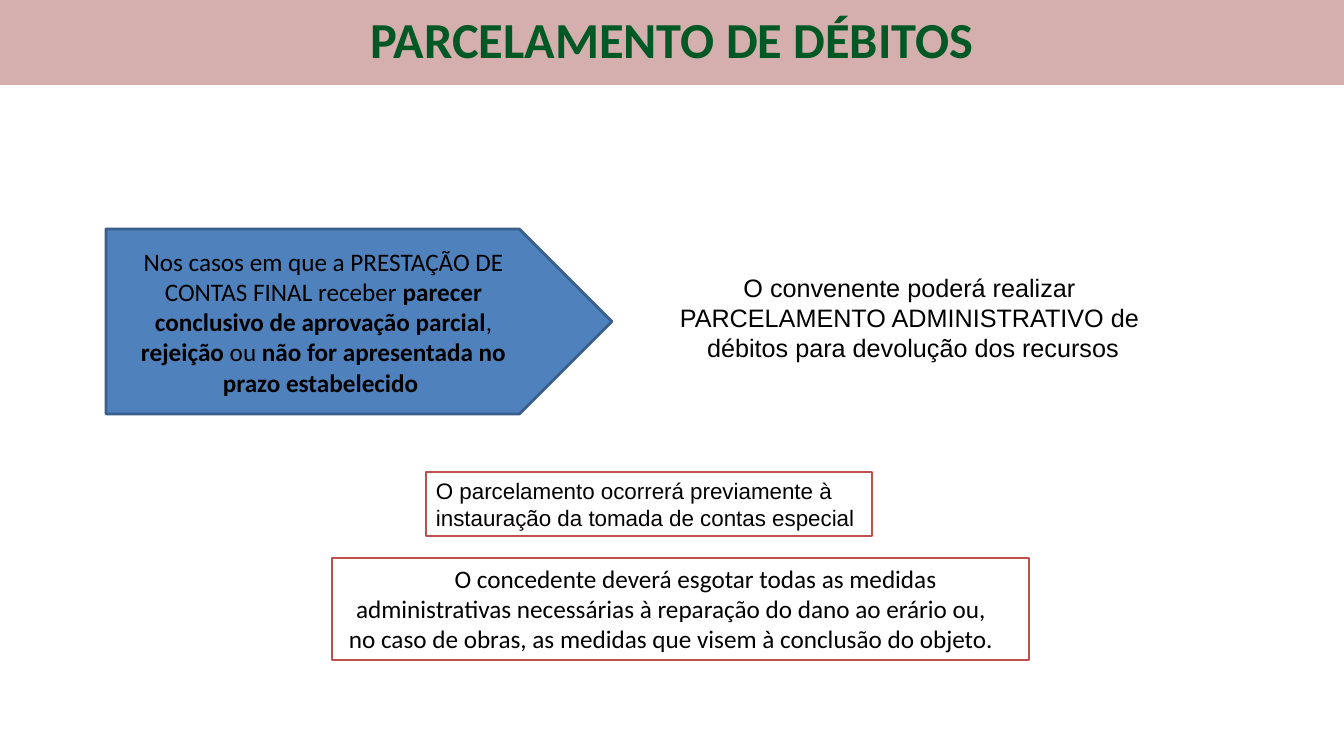
import pptx
import pptx.dml.color
import pptx.enum.shapes
import pptx.enum.text
import pptx.oxml.ns
import pptx.util
from lxml import etree

COLORS = {
    "band": "953735",
    "title": "005825",
    "arrow": "4F81BD",
    "arrow_edge": "3A5F8C",
    "frame": "C0504D",
    "paper": "FFFFFF",
    "ink": "000000",
}
ALIGN = pptx.enum.text.PP_ALIGN
SHAPES = pptx.enum.shapes.MSO_SHAPE
EMU_PER_PX = 914400 / 100.8


def px(length):
    return pptx.util.Emu(round(length * EMU_PER_PX))


def rgb(name):
    return pptx.dml.color.RGBColor.from_string(COLORS[name])


def add_span(para, text, *, size=18, font="Calibri", color="ink", bold=False):
    span = para.add_run()
    span.text = text
    span.font.size = pptx.util.Pt(size)
    span.font.name = font
    span.font.bold = bold
    span.font.color.rgb = rgb(color)


class SlideBuilder:
    """Hold the deck style and the current page, and add elements to it."""

    def __init__(self, deck):
        self.page = deck.slides.add_slide(deck.slide_layouts[5])

    def title(self, text, left, top, width, height):
        box = self.page.shapes.title
        box.left, box.top = px(left), px(top)
        box.width, box.height = px(width), px(height)
        box.fill.solid()
        box.fill.fore_color.rgb = rgb("band")
        tint = box._element.spPr.find(".//" + pptx.oxml.ns.qn("a:srgbClr"))
        etree.SubElement(tint, pptx.oxml.ns.qn("a:alpha"), val="40000")
        frame = box.text_frame
        frame.auto_size = pptx.enum.text.MSO_AUTO_SIZE.NONE
        frame.vertical_anchor = pptx.enum.text.MSO_ANCHOR.MIDDLE
        para = frame.paragraphs[0]
        para.alignment = ALIGN.CENTER
        para.line_spacing = 0.9
        add_span(para, text, size=36, color="title", bold=True)

    def shape(self, kind, *area, fill="paper", line="frame"):
        box = self.page.shapes.add_shape(kind, *map(px, area))
        box.shadow.inherit = False
        box.fill.solid()
        box.fill.fore_color.rgb = rgb(fill)
        box.line.color.rgb = rgb(line)
        box.line.width = pptx.util.Pt(2)
        return box

    def text(self, lines, *area):
        box = self.page.shapes.add_textbox(*map(px, area))
        self.fill_text(box, lines)
        return box

    def fill_text(self, box, lines, align=ALIGN.CENTER, wrap=True, **style):
        frame = box.text_frame
        frame.word_wrap = wrap
        frame.auto_size = pptx.enum.text.MSO_AUTO_SIZE.SHAPE_TO_FIT_TEXT
        frame.vertical_anchor = pptx.enum.text.MSO_ANCHOR.TOP
        for index, spans in enumerate(lines):
            para = frame.add_paragraph() if index else frame.paragraphs[0]
            para.alignment = align
            for text, extra in spans:
                add_span(para, text, **style, **extra)


def main():
    deck = pptx.Presentation()
    deck.slide_width, deck.slide_height = px(1344), px(756)
    slide = SlideBuilder(deck)
    arial = {"font": "Arial"}
    bold = {"bold": True}

    slide.title("PARCELAMENTO DE DÉBITOS", 0, -1, 1344, 86)

    slide.shape(SHAPES.PENTAGON, 106, 229, 506, 185,
                fill="arrow", line="arrow_edge")
    slide.text([[
        ("Nos casos em que a PRESTAÇÃO DE CONTAS FINAL receber ", {}),
        ("parecer conclusivo de aprovação parcial", bold),
        (", ", {}),
        ("rejeição", bold),
        (" ou ", {}),
        ("não for apresentada no prazo estabelecido ", bold),
    ]], 121, 241, 405, 163)

    slide.text([
        [("O convenente poderá realizar ", arial)],
        [("PARCELAMENTO ADMINISTRATIVO de ", arial)],
        [("débitos para devolução dos recursos", arial)],
    ], 612, 267, 602, 102)

    notice = slide.shape(SHAPES.RECTANGLE, 426, 472, 446, 64)
    slide.fill_text(notice, [
        [("O parcelamento ocorrerá previamente à", arial)],
        [("instauração da tomada de contas especial", arial)],
    ], align=ALIGN.LEFT, wrap=False, size=16)

    slide.shape(SHAPES.RECTANGLE, 332, 558, 697, 102)
    duty = slide.text([[(
        "O concedente deverá esgotar todas as medidas administrativas "
        "necessárias à reparação do dano ao erário ou, no caso de obras, "
        "as medidas que visem à conclusão do objeto.", {},
    )]], 332, 558, 678, 102)
    para = duty.text_frame.paragraphs[0]
    para.space_after = pptx.util.Pt(6)
    layout = para._p.get_or_add_pPr()
    layout.set("marL", "0")
    layout.set("indent", str(px(49)))

    deck.save("out.pptx")


if __name__ == "__main__":
    main()
